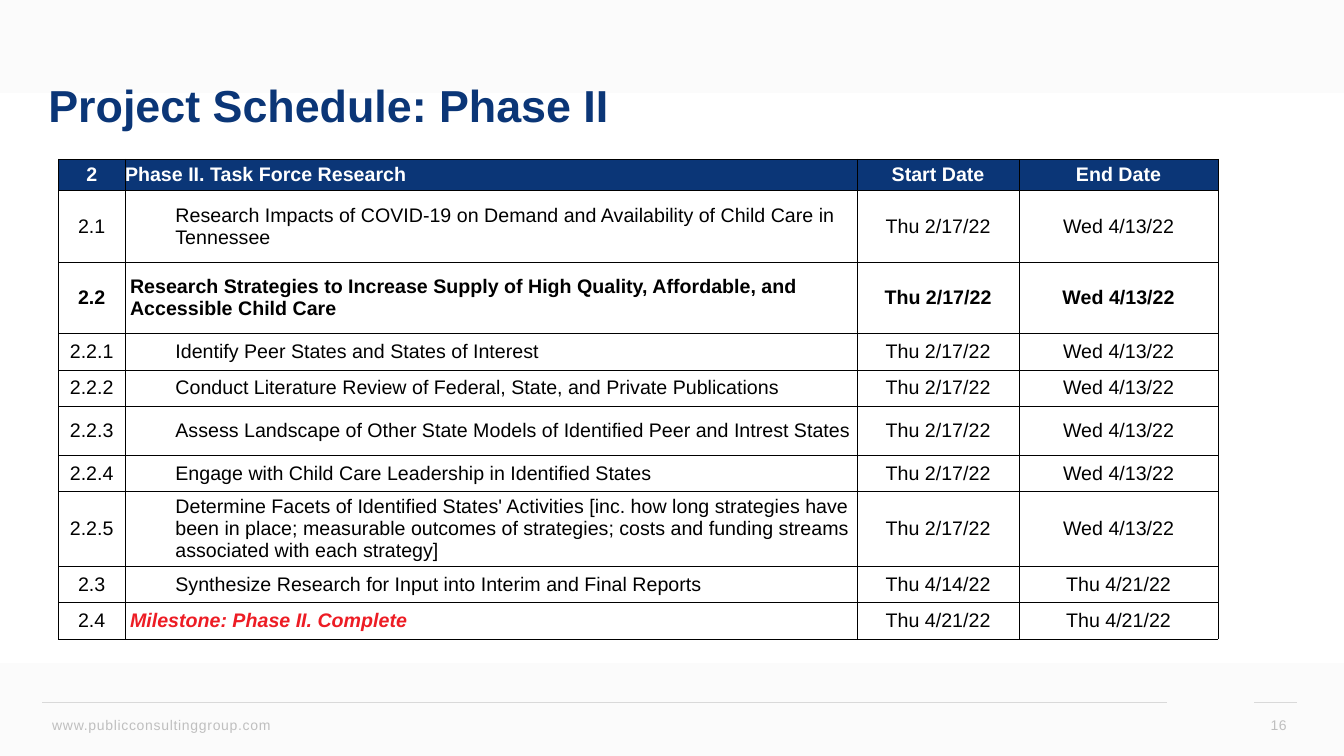
from lxml import etree
from pptx import Presentation
from pptx import util as u
from pptx.dml.color import RGBColor
from pptx.enum import shapes, text
from pptx.oxml import parse_xml
from pptx.oxml.ns import nsdecls, qn

NAVY = RGBColor(0x0B, 0x36, 0x77)
WHITE = RGBColor(0xFF, 0xFF, 0xFF)
BLACK = RGBColor(0, 0, 0)
RED = RGBColor(0xED, 0x1C, 0x24)
MIST = RGBColor(0xFB, 0xFB, 0xFB)
RULE = RGBColor(0xD9, 0xD9, 0xD9)
GRAY = RGBColor(0xBF, 0xBF, 0xBF)

WIDE, HIGH = 13.33, 7.5
EDGE, FAR = 0.42, 12.44
COLS = [0.66, 7.26, 1.61, 1.97]
ROWS = [0.31, 0.71, 0.71, 0.36, 0.36, 0.49, 0.36, 0.74, 0.36, 0.36]

START, END, LAST = "Thu 2/17/22", "Wed 4/13/22", "Thu 4/21/22"
TASKS = [
    ("2", "Phase II. Task Force Research", "Start Date", "End Date", "head"),
    ("2.1", "Research Impacts of COVID-19 on Demand and Availability of "
     "Child Care in Tennessee", START, END, "task"),
    ("2.2", "Research Strategies to Increase Supply of High Quality, "
     "Affordable, and\nAccessible Child Care", START, END, "group"),
    ("2.2.1", "Identify Peer States and States of Interest", START, END, "task"),
    ("2.2.2", "Conduct Literature Review of Federal, State, and Private "
     "Publications", START, END, "task"),
    ("2.2.3", "Assess Landscape of Other State Models of Identified Peer and "
     "Intrest States", START, END, "task"),
    ("2.2.4", "Engage with Child Care Leadership in Identified States",
     START, END, "task"),
    ("2.2.5", "Determine Facets of Identified States' Activities [inc. how "
     "long strategies have been in place; measurable outcomes of strategies; "
     "costs and funding streams associated with each strategy]",
     START, END, "task"),
    ("2.3", "Synthesize Research for Input into Interim and Final Reports",
     "Thu 4/14/22", LAST, "task"),
    ("2.4", "Milestone: Phase II. Complete", LAST, LAST, "goal"),
]
INDENT = {"head": 0, "task": 0.5, "group": 0.05, "goal": 0.05}


def box(left, top, width, height):
    return [u.Inches(n) for n in (left, top, width, height)]


def style(para, size, color, bold=False, slant=False):
    font = para.font
    font.name, font.size = "Arial", u.Pt(size)
    font.bold, font.italic = bold, slant
    font.color.rgb = color


def add_band(slide, top, turn):
    band = slide.shapes.add_shape(
        shapes.MSO_SHAPE.RECTANGLE, *box(0, top, WIDE, 1.85))
    band.shadow.inherit = False
    band.rotation = turn
    band.line.fill.background()
    band.fill.gradient()
    band.fill.gradient_angle = 270
    for stop, color in zip(band.fill.gradient_stops, (MIST, WHITE)):
        stop.color.rgb = color


def add_rule(slide, left, right):
    y = u.Inches(6.97)
    rule = slide.shapes.add_connector(
        shapes.MSO_CONNECTOR.STRAIGHT, u.Inches(left), y, u.Inches(right), y)
    rule.line.color.rgb = RULE
    rule.line.width = u.Pt(0.5)
    etree.SubElement(rule.element.spPr, qn("a:effectLst"))


def add_note(slide, words, place, align):
    frame = slide.shapes.add_textbox(*place).text_frame
    frame.word_wrap = True
    frame.vertical_anchor = text.MSO_ANCHOR.MIDDLE
    para = frame.paragraphs[0]
    run = para.add_run()
    run.text = words
    run._r.get_or_add_rPr().set("spc", "50")
    para.alignment = align
    style(para, 10, GRAY)


def add_edges(cell):
    props = cell._tc.get_or_add_tcPr()
    for side in "LRTB":
        props.append(parse_xml(
            f'<a:ln{side} {nsdecls("a")} w="6350"><a:solidFill>'
            f'<a:srgbClr val="{BLACK}"/></a:solidFill></a:ln{side}>'))


def fill_cell(cell, words, col, kind):
    add_edges(cell)
    cell.fill.solid()
    cell.fill.fore_color.rgb = NAVY if kind == "head" else WHITE
    cell.margin_left = cell.margin_right = 0
    cell.margin_top = cell.margin_bottom = 0
    cell.vertical_anchor = text.MSO_ANCHOR.MIDDLE
    cell.text_frame.text = words
    goal = kind == "goal" and col == 1
    color = WHITE if kind == "head" else RED if goal else BLACK
    for para in cell.text_frame.paragraphs:
        if col == 1:
            indent = u.Inches(INDENT[kind])
            para._p.get_or_add_pPr().set("marL", str(indent))
        else:
            para.alignment = text.PP_ALIGN.CENTER
        style(para, 14, color, goal or kind in ("head", "group"), goal)


def add_plan(slide):
    table = slide.shapes.add_table(
        len(ROWS), len(COLS), *box(0.58, 1.58, sum(COLS), sum(ROWS))).table
    table.first_row = table.horz_banding = False
    for col, width in zip(table.columns, COLS):
        col.width = u.Inches(width)
    for row, height, (*words, kind) in zip(table.rows, ROWS, TASKS):
        row.height = u.Inches(height)
        for col, (cell, word) in enumerate(zip(row.cells, words)):
            fill_cell(cell, word, col, kind)


def set_title(slide, words):
    title = slide.shapes.title
    title.left, title.top, title.width, title.height = box(0.38, 0.4, 12.52, 1.35)
    frame = title.text_frame
    frame.text = words
    frame.vertical_anchor = text.MSO_ANCHOR.MIDDLE
    para = frame.paragraphs[0]
    para.alignment = text.PP_ALIGN.LEFT
    para.line_spacing = 0.9
    style(para, 32, NAVY, True)
    slide.shapes.element.append(title.element)


def main():
    deck = Presentation()
    deck.slide_width, deck.slide_height = u.Inches(WIDE), u.Inches(HIGH)
    slide = deck.slides.add_slide(deck.slide_layouts[5])
    add_band(slide, 0, 0)
    add_band(slide, HIGH - 1.85, 180)
    add_note(slide, "www.publicconsultinggroup.com",
             box(EDGE, 7.05, 3.87, 0.28), text.PP_ALIGN.LEFT)
    add_rule(slide, EDGE, 11.57)
    add_rule(slide, FAR, FAR + EDGE)
    add_plan(slide)
    set_title(slide, "Project Schedule: Phase II")
    add_note(slide, "16", box(FAR, 6.99, EDGE, 0.4), text.PP_ALIGN.RIGHT)
    deck.save("out.pptx")


if __name__ == "__main__":
    main()
